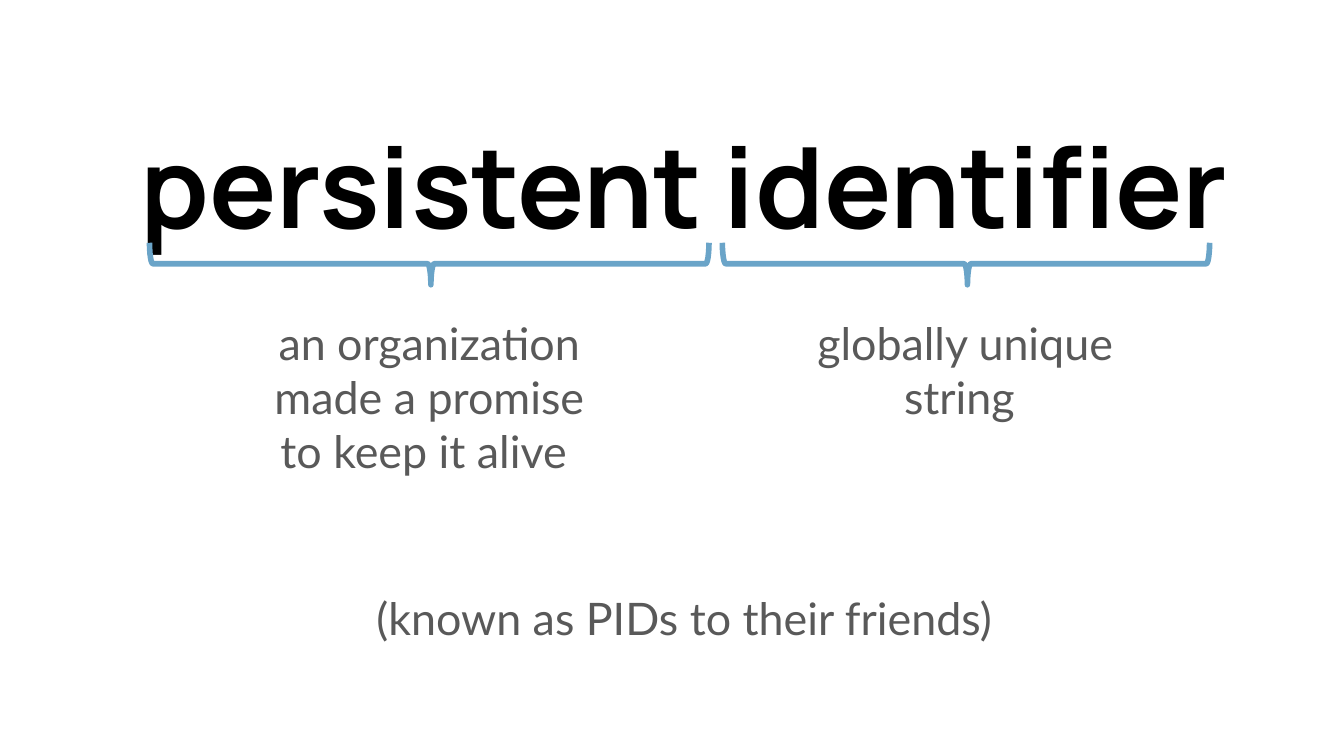
from pptx import Presentation
from pptx import util as u
from pptx.dml.color import RGBColor
from pptx.enum import shapes, text

PX = 5715  # EMU per px, 160 px to the inch
SLIDE_SIZE = (1600, 900)
COLORS = {"title": "000000", "body": "595959", "brace": "6AA4C8"}
STYLES = {  # font, points, bold
    "title": ("Manrope", 60, True),
    "body": ("Lato", 24, False),
}

# Style, wording, (left, top, width, height)
TEXTS = [
    ("title", "persistent identifier", (60, 123, 1509, 178)),
    ("body", "an organization made a promise to keep it alive ", (307, 360, 408, 224)),
    ("body", "globally unique string ", (940, 360, 418, 178)),
    ("body", "(known as PIDs to their friends)", (424, 687, 781, 66)),
]

# Horizontal extent of the brace under each word: left, right
BRACES = [(178, 844), (860, 1440)]
BRACE_TOP, BRACE_DEPTH = 289, 50


def px(*lengths):
    return [u.Emu(length * PX) for length in lengths]


def add_text(slide, style, wording, place):
    font_name, size, bold = STYLES[style]
    frame = slide.shapes.add_textbox(*px(*place)).text_frame
    frame.word_wrap = True
    frame.vertical_anchor = text.MSO_ANCHOR.TOP
    frame.margin_left = frame.margin_right = u.Inches(0.1)
    frame.margin_top = frame.margin_bottom = u.Inches(0.1)
    para = frame.paragraphs[0]
    para.text = wording
    para.alignment = text.PP_ALIGN.CENTER
    para.font.name, para.font.size, para.font.bold = font_name, u.Pt(size), bold
    para.font.color.rgb = RGBColor.from_string(COLORS[style])


def add_brace(slide, left, right):
    # A left brace turned about its centre so that its tip points down
    length = right - left
    x = (left + right - BRACE_DEPTH) // 2
    y = BRACE_TOP + (BRACE_DEPTH - length) // 2
    brace = slide.shapes.add_shape(
        shapes.MSO_SHAPE.LEFT_BRACE, *px(x, y, BRACE_DEPTH, length))
    brace.rotation = 270
    brace.adjustments[0], brace.adjustments[1] = 0.08, 0.503
    brace.shadow.inherit = False
    brace.fill.background()
    brace.line.color.rgb = RGBColor.from_string(COLORS["brace"])
    brace.line.width = u.Pt(3)


def main():
    deck = Presentation()
    deck.slide_width, deck.slide_height = px(*SLIDE_SIZE)
    slide = deck.slides.add_slide(deck.slide_layouts[6])
    for style, wording, place in TEXTS:
        add_text(slide, style, wording, place)
    for left, right in BRACES:
        add_brace(slide, left, right)
    deck.save("out.pptx")


if __name__ == "__main__":
    main()
